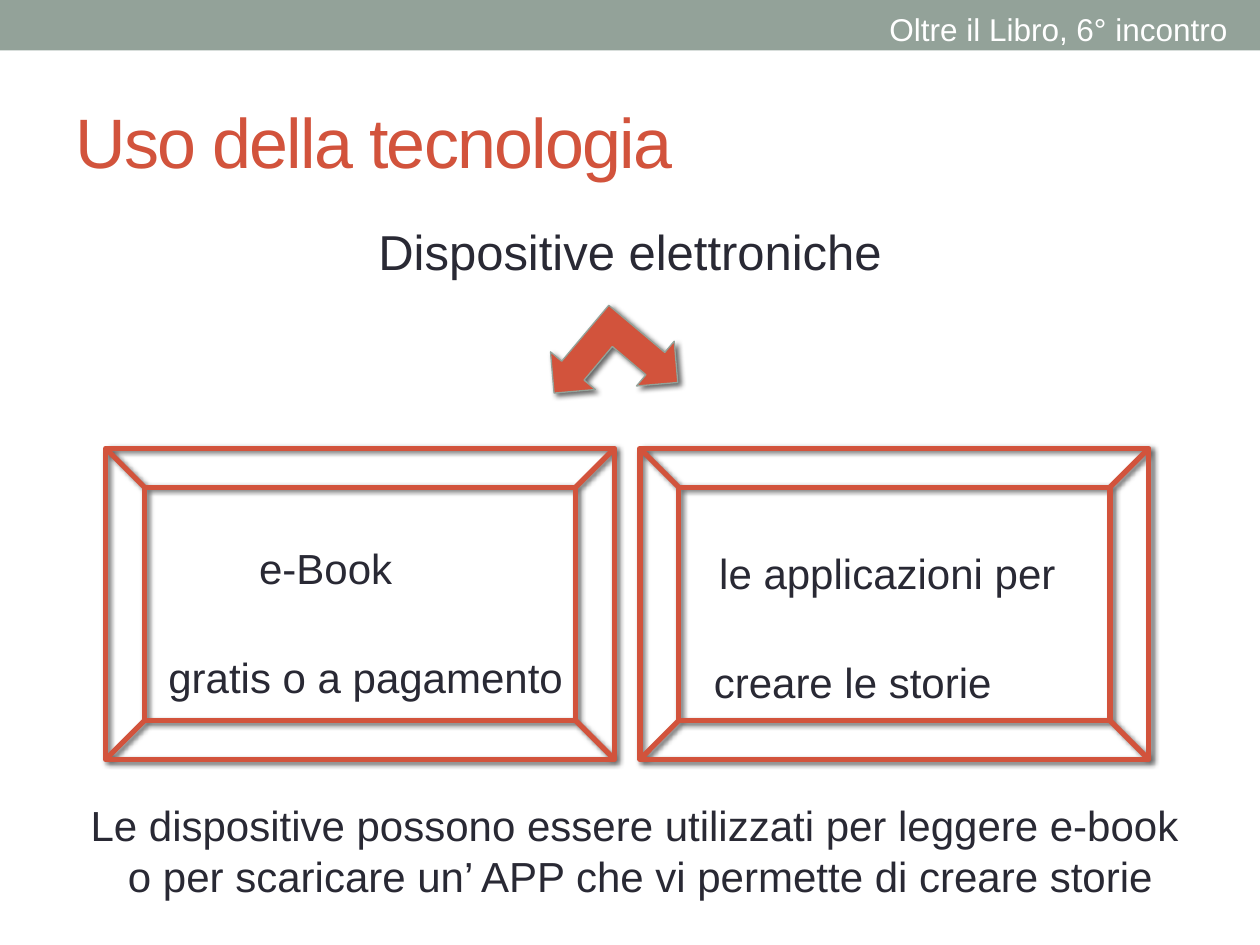
"""Build a slide on electronic devices, e-books and story apps."""
from lxml.etree import SubElement as Sub
from pptx import Presentation
from pptx.dml.color import RGBColor
from pptx.enum.shapes import MSO_SHAPE as Kind
from pptx.enum.text import MSO_ANCHOR as Anchor, MSO_AUTO_SIZE as Fit, PP_ALIGN as Align
from pptx.oxml.ns import qn
from pptx.util import Cm, Pt

RED = RGBColor(0xD2, 0x53, 0x3C)
SAGE = RGBColor(0x93, 0xA2, 0x99)
INK = RGBColor(0x29, 0x29, 0x34)
WHITE = RGBColor(0xFF, 0xFF, 0xFF)


class Deck:
    """Hold the style and the current slide."""

    font = "Arial"

    def __init__(self):
        self.show = Presentation()
        self.show.slide_width, self.show.slide_height = Cm(25.4), Cm(19.05)
        self.slide = self.show.slides.add_slide(self.show.slide_layouts[1])

    def run(self, para, text, size, color):
        run = para.add_run()
        run.text = text
        run.font.name, run.font.size = self.font, Pt(size)
        run.font.color.rgb = color
        return run

    def place(self, item, box):
        item.left, item.top, item.width, item.height = map(Cm, box)
        item.text_frame.auto_size = Fit.NONE
        return item.text_frame

    def title(self, text, box):
        frame = self.place(self.slide.shapes.title, box)
        frame.vertical_anchor = Anchor.MIDDLE
        para = frame.paragraphs[0]
        para.alignment = Align.LEFT
        run = self.run(para, text, 40, RED)
        run.font._element.set("spc", "-100")

    def body(self, rows, box):
        self.fill(self.place(self.slide.placeholders[1], box), rows)

    def note(self, rows, color, box):
        frame = self.slide.shapes.add_textbox(*map(Cm, box)).text_frame
        frame.word_wrap = False
        self.fill(frame, rows, color)

    def fill(self, frame, rows, color=INK):
        for num, (text, size, align, gap, start) in enumerate(rows):
            para = frame.add_paragraph() if num else frame.paragraphs[0]
            para.alignment = align
            para.space_before, para.line_spacing = Pt(gap), 1.0
            prop = para._p.get_or_add_pPr()
            prop.set("marL", str(Cm(start)))
            prop.set("indent", "0")
            Sub(prop, qn("a:buNone"))
            self.run(para, text, size, color)

    def shape(self, kind, box, fill=None, edge=None, width=0.75, turn=0, shade=True):
        item = self.slide.shapes.add_shape(kind, *map(Cm, box))
        item.rotation = turn
        if fill is None:
            item.fill.background()
        else:
            item.fill.solid()
            item.fill.fore_color.rgb = fill
        if edge is None:
            item.line.fill.background()
        else:
            item.line.color.rgb = edge
            item.line.width = Pt(width)
        item.shadow.inherit = False
        if shade:
            self.shade(item)

    def shade(self, item):
        root = item._element.spPr.find(qn("a:effectLst"))
        cast = Sub(root, qn("a:outerShdw"), blurRad=str(Pt(3)), dist=str(Pt(2)),
                   dir="2700000", rotWithShape="0")
        tint = Sub(cast, qn("a:srgbClr"), val="000000")
        Sub(tint, qn("a:alpha"), val="60000")


def main():
    deck = Deck()
    left, mid = Align.LEFT, Align.CENTER
    deck.shape(Kind.RECTANGLE, (0, 0, 25.4, 1.02), fill=SAGE, shade=False)
    deck.title("Uso della tecnologia", (1.27, 1.47, 22.86, 2.74))
    deck.body([("Dispositive elettroniche", 28, mid, 4, 0),
               ("e-Book", 24, left, 150, 3.7),
               ("gratis o a pagamento", 24, left, 33, 1.87)],
              (1.27, 4.34, 22.86, 13.54))
    deck.note([("Oltre il Libro, 6° incontro", 18, left, 0, 0)], WHITE,
              (17.68, 0.08, 7.39, 1.02))
    for side in (2.13, 12.9):
        deck.shape(Kind.BEVEL, (side, 9.04, 10.26, 6.27), edge=RED, width=3)
    deck.note([("le applicazioni per", 24, left, 0, 0.11),
               ("creare le storie", 24, left, 33, 0)],
              INK, (14.14, 10.92, 7.4, 3.6))
    deck.shape(Kind.LEFT_UP_ARROW, (11.2, 6.22, 2.36, 2.36), RED, SAGE, turn=220.1)
    deck.note([("Le dispositive possono essere utilizzati per leggere e-book ", 24, mid, 0, 0),
               ("o per scaricare un’ APP che vi permette di creare storie", 24, mid, 0, 0)],
              INK, (1.57, 16, 22.68, 2.31))
    deck.show.save("out.pptx")


if __name__ == "__main__":
    main()
